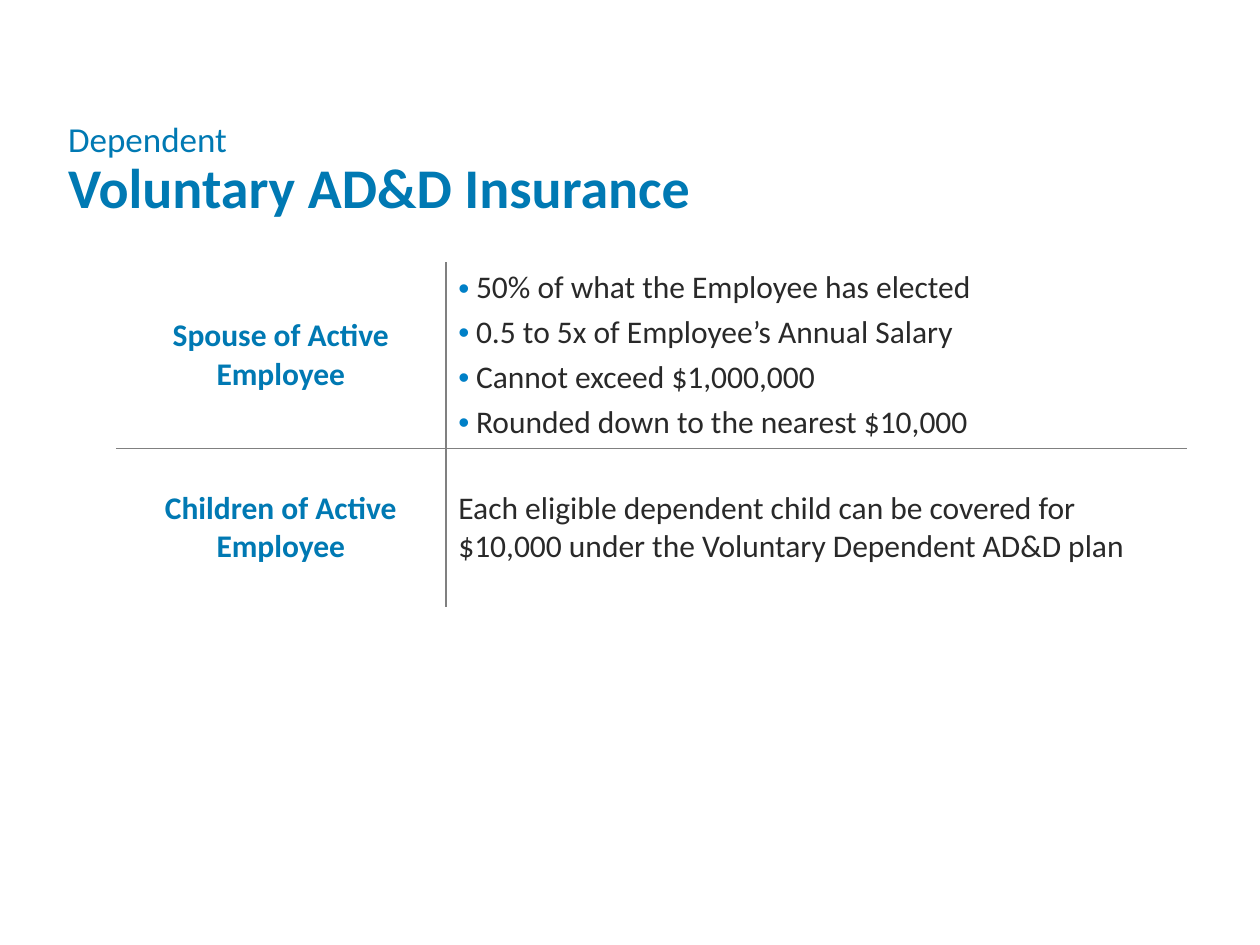
from lxml.etree import SubElement
from pptx import Presentation
from pptx.dml.color import RGBColor
from pptx.enum.text import MSO_ANCHOR, MSO_AUTO_SIZE, PP_ALIGN
from pptx.oxml.ns import qn
from pptx.util import Inches, Pt

FONT = "Calibri"
COLORS = {"heading": "0079B3", "body": "292929", "bullet": "0080C7", "rule": "808080"}

# Each row: heading, details, whether the details are bulleted, row height
ROWS = [
    ("Spouse of Active Employee",
     ["50% of what the Employee has elected",
      "0.5 to 5x of Employee’s Annual Salary",
      "Cannot exceed $1,000,000",
      "Rounded down to the nearest $10,000"], True, 1.48),
    ("Children of Active Employee",
     ["Each eligible dependent child can be covered for "
      "$10,000 under the Voluntary Dependent AD&D plan"], False, 1.26),
]
COLUMN_SHARES = (0.308, 0.692)


def format_font(font, size, color, bold=False):
    font.name = FONT
    font.size = Pt(size)
    font.bold = bold
    font.color.rgb = RGBColor.from_string(COLORS[color])


def add_bullet(paragraph):
    properties = paragraph._p.get_or_add_pPr()
    indent = Inches(0.14)
    properties.set("marL", str(indent))
    properties.set("indent", str(-indent))
    color = SubElement(properties, qn("a:buClr"))
    SubElement(color, qn("a:srgbClr"), val=COLORS["bullet"])
    SubElement(properties, qn("a:buFont"), typeface="Arial")
    SubElement(properties, qn("a:buChar"), char="•")


def set_borders(cell, visible_sides):
    properties = cell._tc.get_or_add_tcPr()
    for side in "LRTB":
        line = SubElement(properties, qn(f"a:ln{side}"), w=str(Pt(1)))
        if side in visible_sides:
            fill = SubElement(line, qn("a:solidFill"))
            SubElement(fill, qn("a:srgbClr"), val=COLORS["rule"])
        else:
            SubElement(line, qn("a:noFill"))


def fill_cell(cell, lines, color, bold=False, align=PP_ALIGN.LEFT, bulleted=False):
    cell.fill.background()
    cell.vertical_anchor = MSO_ANCHOR.MIDDLE
    cell.text_frame.text = "\n".join(lines)
    for index, paragraph in enumerate(cell.text_frame.paragraphs):
        paragraph.alignment = align
        if index:
            paragraph.space_before = Pt(3.6)
        if bulleted:
            add_bullet(paragraph)
        format_font(paragraph.runs[0].font, 18, color, bold)


def place_title(slide, left, top, width, height):
    title = slide.shapes.title
    title.left, title.top, title.width, title.height = left, top, width, height
    frame = title.text_frame
    frame.auto_size = MSO_AUTO_SIZE.NONE
    frame.word_wrap = True
    frame.vertical_anchor = MSO_ANCHOR.TOP
    frame.margin_left = frame.margin_right = frame.margin_top = frame.margin_bottom = 0
    frame.text = "Dependent\vVoluntary AD&D Insurance"
    paragraph = frame.paragraphs[0]
    paragraph.alignment = PP_ALIGN.LEFT
    paragraph.line_spacing = 0.9
    kicker, heading = paragraph.runs
    format_font(kicker.font, 20, "heading")
    format_font(heading.font, 32, "heading", bold=True)


def add_coverage_table(slide, left, top, width, height):
    table = slide.shapes.add_table(len(ROWS), 2, left, top, width, height).table
    table.first_row = table.horz_banding = False
    for column, share in zip(table.columns, COLUMN_SHARES):
        column.width = int(width * share)
    total = sum(row[-1] for row in ROWS)
    for index, (heading, details, bulleted, share) in enumerate(ROWS):
        table.rows[index].height = int(height * share / total)
        heading_cell, details_cell = table.cell(index, 0), table.cell(index, 1)
        # Only the rules between cells show
        inner = ("T" if index else "") + ("B" if index < len(ROWS) - 1 else "")
        set_borders(heading_cell, inner + "R")
        set_borders(details_cell, inner + "L")
        fill_cell(heading_cell, [heading], "heading", True, PP_ALIGN.CENTER)
        fill_cell(details_cell, details, "body", bulleted=bulleted)


def main():
    presentation = Presentation()
    presentation.slide_width, presentation.slide_height = Inches(10), Inches(7.5)
    slide = presentation.slides.add_slide(presentation.slide_layouts[5])
    place_title(slide, Inches(0.54), Inches(0.97), Inches(8.88), Inches(0.96))
    add_coverage_table(slide, Inches(0.92), Inches(2.08), Inches(8.5), Inches(2.74))
    presentation.save("out.pptx")


if __name__ == "__main__":
    main()
